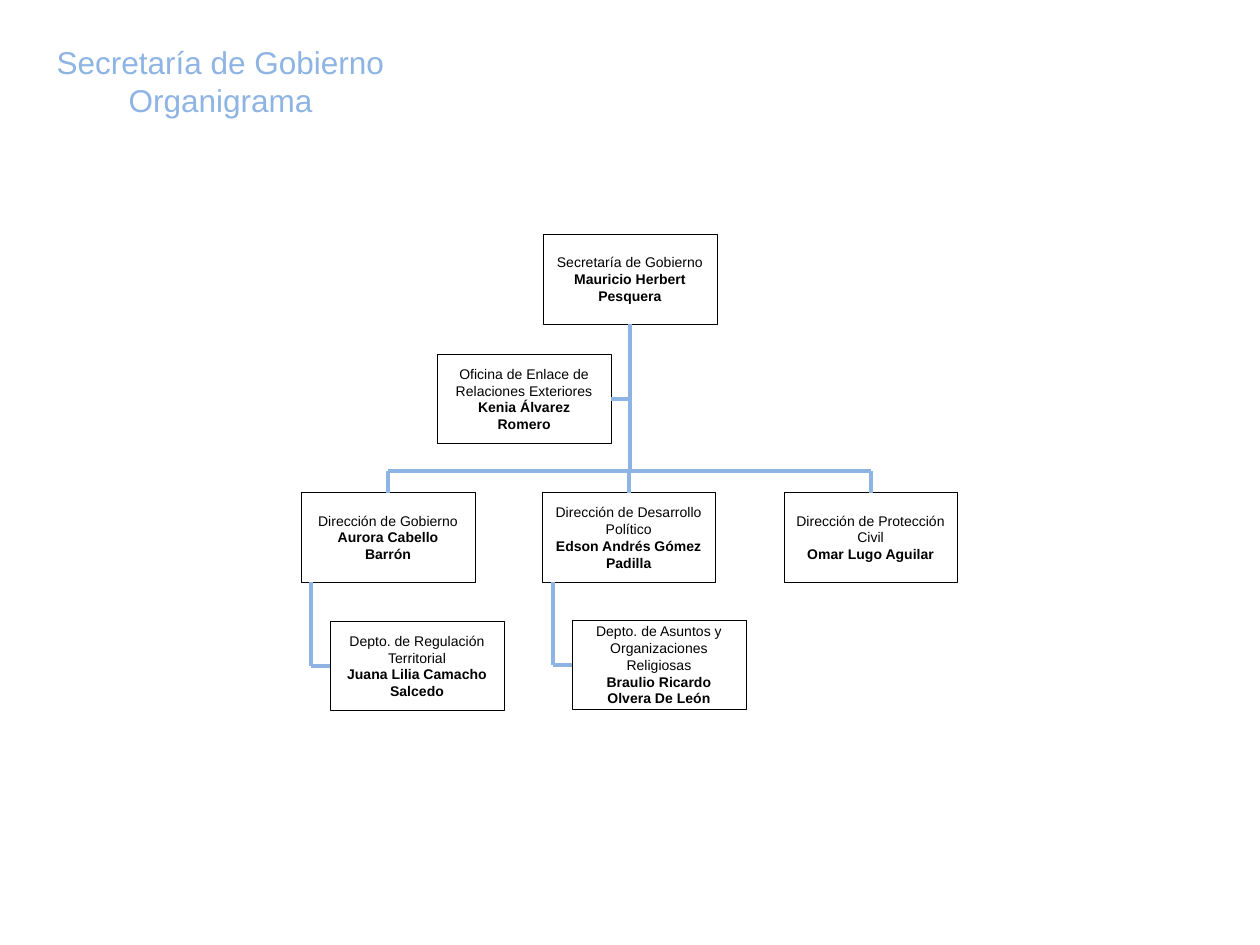
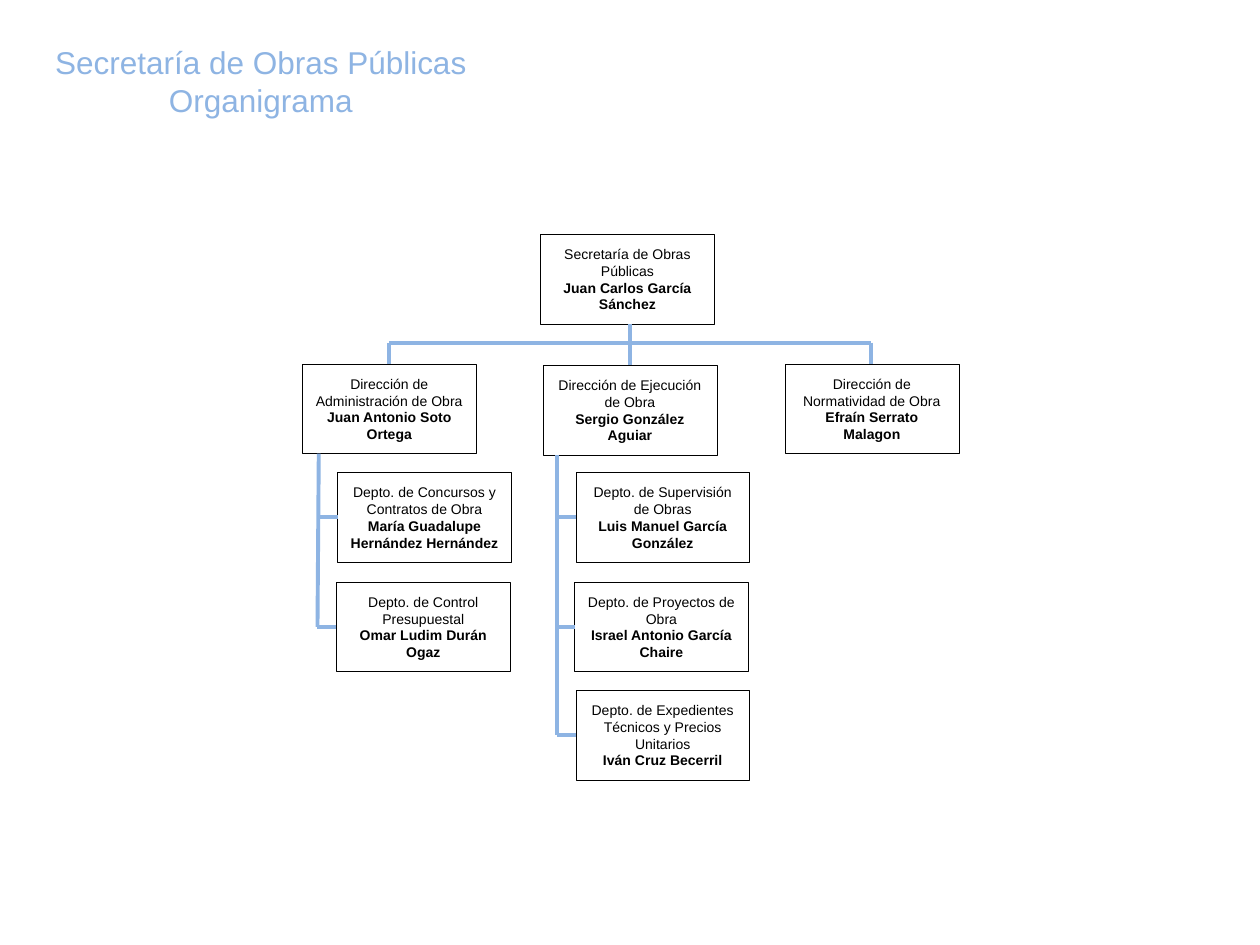
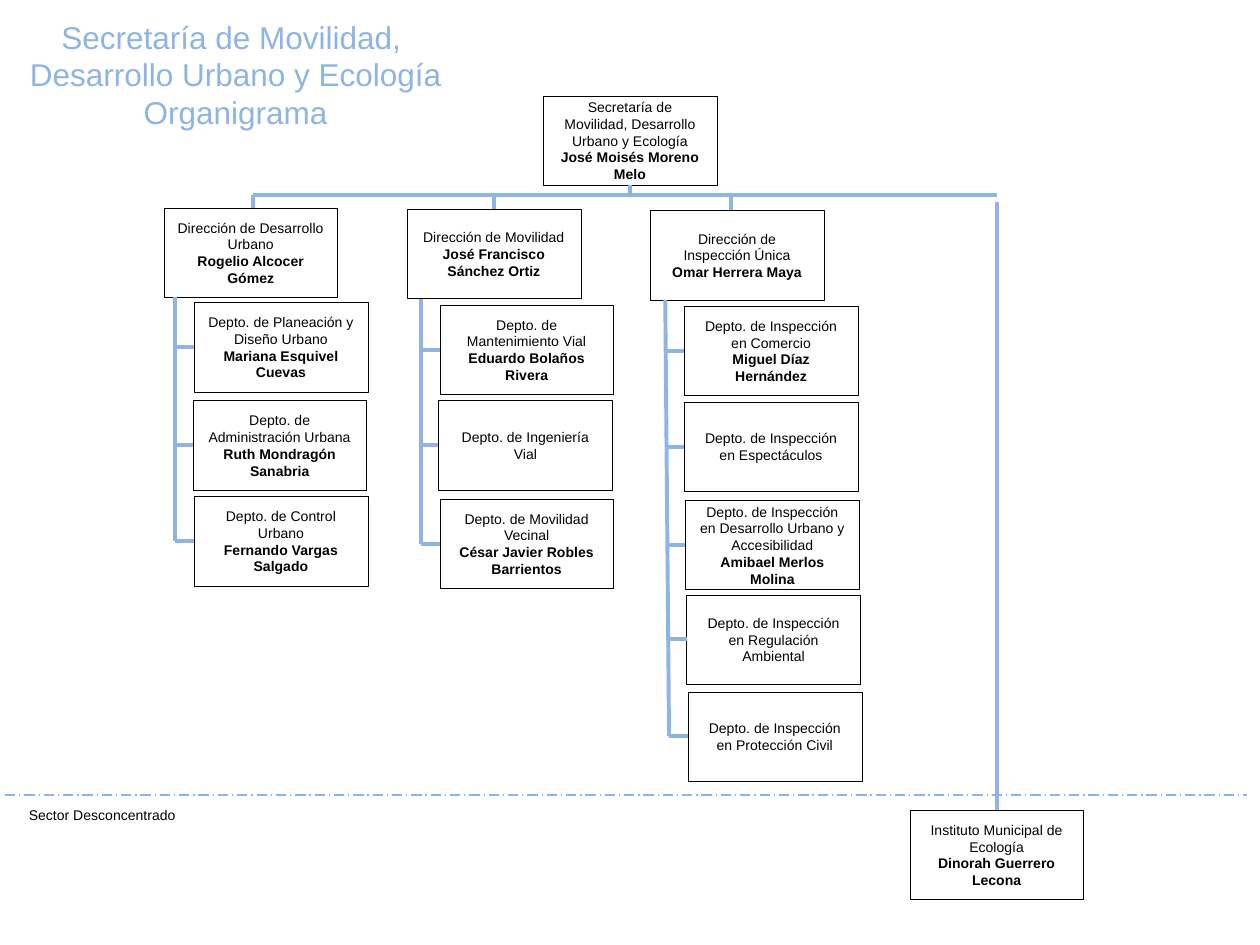
from lxml import etree
from pptx import Presentation
from pptx.dml.color import RGBColor
from pptx.enum import dml, shapes, text
from pptx.oxml import ns
from pptx.util import Inches, Pt

BLUE, BLACK, WHITE = "8EB4E3", "000000", "FFFFFF"
FONT = "Arial"
BOX_W, BOX_H = 1.38, 0.71
TRUNK_X = 5
RAIL_GAP = 0.15

CHARTS = [
    {
        "title": ["Secretaría de Gobierno", "Organigrama"],
        "title_at": (0.33, 0.29, 2.84, 0.71),
        "head": (4.31, 1.86, "Secretaría de Gobierno", "Mauricio Herbert Pesquera"),
        "bar_y": 3.74,
        "aside": (3.47, 2.81, "Oficina de Enlace de Relaciones Exteriores", "Kenia Álvarez Romero"),
        "branches": [
            (3.08, (2.39, 3.91, "Dirección de Gobierno", "Aurora Cabello Barrón"), [
                (2.62, 4.93, "Depto. de Regulación Territorial", "Juana Lilia Camacho Salcedo"),
            ]),
            (4.99, (4.3, 3.91, "Dirección de Desarrollo Político", "Edson Andrés Gómez Padilla"), [
                (4.54, 4.92, "Depto. de Asuntos y Organizaciones Religiosas", "Braulio Ricardo Olvera De León"),
            ]),
            (6.91, (6.22, 3.91, "Dirección de Protección Civil", "Omar Lugo Aguilar"), []),
        ],
    },
    {
        "title": ["Secretaría de Obras Públicas", "Organigrama"],
        "title_at": (0.32, 0.29, 3.5, 0.71),
        "head": (4.29, 1.86, "Secretaría de Obras Públicas", "Juan Carlos García Sánchez"),
        "bar_y": 2.72,
        "branches": [
            (3.09, (2.4, 2.89, "Dirección de Administración de Obra", "Juan Antonio Soto Ortega"), [
                (2.68, 3.75, "Depto. de Concursos y Contratos de Obra", "María Guadalupe Hernández Hernández"),
                (2.67, 4.62, "Depto. de Control Presupuestal", "Omar Ludim Durán Ogaz"),
            ]),
            (5, (4.31, 2.9, "Dirección de Ejecución de Obra", "Sergio González Aguiar"), [
                (4.57, 3.75, "Depto. de Supervisión de Obras", "Luis Manuel García González"),
                (4.56, 4.62, "Depto. de Proyectos de Obra", "Israel Antonio García Chaire"),
                (4.57, 5.48, "Depto. de Expedientes Técnicos y Precios Unitarios", "Iván Cruz Becerril"),
            ]),
            (6.91, (6.23, 2.89, "Dirección de Normatividad de Obra", "Efraín Serrato Malagon"), []),
        ],
    },
    {
        "title": ["Secretaría de Movilidad, ", "Desarrollo Urbano y Ecología", "Organigrama"],
        "title_at": (0.12, 0.09, 3.5, 1.01),
        "head": (4.31, 0.76, "Secretaría de Movilidad, Desarrollo Urbano y Ecología", "José Moisés Moreno Melo"),
        "bar_y": 1.55,
        "branches": [
            (2.01, (1.3, 1.65, "Dirección de Desarrollo Urbano", "Rogelio Alcocer Gómez"), [
                (1.54, 2.4, "Depto. de Planeación y Diseño Urbano", "Mariana Esquivel Cuevas"),
                (1.53, 3.18, "Depto. de Administración Urbana", "Ruth Mondragón Sanabria"),
                (1.54, 3.94, "Depto. de Control Urbano", "Fernando Vargas Salgado"),
            ]),
            (3.92, (3.23, 1.66, "Dirección de Movilidad", "José Francisco Sánchez Ortiz"), [
                (3.49, 2.42, "Depto. de Mantenimiento Vial", "Eduardo Bolaños Rivera"),
                (3.48, 3.18, "Depto. de Ingeniería Vial", ""),
                (3.49, 3.96, "Depto. de Movilidad Vecinal", "César Javier Robles Barrientos"),
            ]),
            (5.8, (5.16, 1.67, "Dirección de Inspección Única", "Omar Herrera Maya"), [
                (5.43, 2.43, "Depto. de Inspección en Comercio", "Miguel Díaz Hernández"),
                (5.43, 3.19, "Depto. de Inspección en Espectáculos", ""),
                (5.44, 3.97, "Depto. de Inspección en Desarrollo Urbano y Accesibilidad", "Amibael Merlos Molina"),
                (5.45, 4.72, "Depto. de Inspección en Regulación Ambiental", ""),
                (5.46, 5.49, "Depto. de Inspección en Protección Civil", ""),
            ]),
        ],
        "detached": {
            "box": (7.22, 6.43, "Instituto Municipal de Ecología", "Dinorah Guerrero Lecona"),
            "line": (7.91, 1.6),
            "divider": (0.04, 6.31, 9.9, 6.31),
            "label": "Sector Desconcentrado",
            "label_at": (0.13, 6.35, 1.38, 0.24),
        },
    },
]


def rgb(value):
    return RGBColor.from_string(value)


def write(tf, lines, size, color, align):
    for i, (line, bold) in enumerate(lines):
        p = tf.paragraphs[0] if i == 0 else tf.add_paragraph()
        p.alignment = align
        r = p.add_run()
        r.text = line
        r.font.name, r.font.size, r.font.bold = FONT, Pt(size), bold
        r.font.color.rgb = rgb(color)


def add_title(s, lines, at):
    sp = s.shapes.title
    sp.left, sp.top, sp.width, sp.height = map(Inches, at)
    tf = sp.text_frame
    tf.word_wrap = False
    tf.auto_size = text.MSO_AUTO_SIZE.NONE
    tf.vertical_anchor = text.MSO_ANCHOR.TOP
    write(tf, [(line, False) for line in lines], 18, BLUE, text.PP_ALIGN.CENTER)


def add_box(s, box):
    x, y, office, person = box
    sp = s.shapes.add_shape(shapes.MSO_SHAPE.RECTANGLE, *map(Inches, (x, y, BOX_W, BOX_H)))
    sp.shadow.inherit = False
    sp.fill.solid()
    sp.fill.fore_color.rgb = rgb(WHITE)
    sp.line.color.rgb = rgb(BLACK)
    sp.line.width = Pt(0.25)
    tf = sp.text_frame
    tf.word_wrap = True
    tf.vertical_anchor = text.MSO_ANCHOR.MIDDLE
    lines = [(office, False)] + ([(person, True)] if person else [])
    write(tf, lines, 8, BLACK, text.PP_ALIGN.CENTER)


def add_line(s, x1, y1, x2, y2, width=2.25):
    c = s.shapes.add_connector(shapes.MSO_CONNECTOR.STRAIGHT, *map(Inches, (x1, y1, x2, y2)))
    c.line.color.rgb = rgb(BLUE)
    c.line.width = Pt(width)
    etree.SubElement(c._element.spPr, ns.qn("a:effectLst"))
    return c


def add_branch(s, bar_y, drop_x, office, depts):
    top = office[1]
    add_box(s, office)
    add_line(s, drop_x, bar_y, drop_x, top)
    for dept in depts:
        x, mid = dept[0], dept[1] + BOX_H / 2
        add_box(s, dept)
        add_line(s, x - RAIL_GAP, mid, x, mid)
    if depts:
        first, last = depts[0], depts[-1]
        add_line(s, first[0] - RAIL_GAP, top + BOX_H, last[0] - RAIL_GAP, last[1] + BOX_H / 2)


def add_aside(s, box):
    mid = box[1] + BOX_H / 2
    add_box(s, box)
    add_line(s, box[0] + BOX_W, mid, TRUNK_X, mid)


def add_detached(s, part):
    x, y = part["line"]
    add_line(s, x, y, x, part["box"][1])
    add_box(s, part["box"])
    add_line(s, *part["divider"], width=0.75).line.dash_style = dml.MSO_LINE.LONG_DASH_DOT
    tf = s.shapes.add_textbox(*map(Inches, part["label_at"])).text_frame
    tf.word_wrap = False
    write(tf, [(part["label"], False)], 8, BLACK, text.PP_ALIGN.LEFT)


def add_chart_slide(prs, chart):
    s = prs.slides.add_slide(prs.slide_layouts[5])
    add_title(s, chart["title"], chart["title_at"])
    head, bar_y, branches = chart["head"], chart["bar_y"], chart["branches"]
    add_box(s, head)
    add_line(s, TRUNK_X, head[1] + BOX_H, TRUNK_X, bar_y)
    for branch in branches:
        add_branch(s, bar_y, *branch)
    detached = chart.get("detached")
    bar_end = detached["line"][0] if detached else branches[-1][0]
    add_line(s, branches[0][0], bar_y, bar_end, bar_y)
    if "aside" in chart:
        add_aside(s, chart["aside"])
    if detached:
        add_detached(s, detached)


def main():
    prs = Presentation()
    prs.slide_width, prs.slide_height = Inches(10), Inches(7.5)
    for chart in CHARTS:
        add_chart_slide(prs, chart)
    prs.save("out.pptx")


if __name__ == "__main__":
    main()
